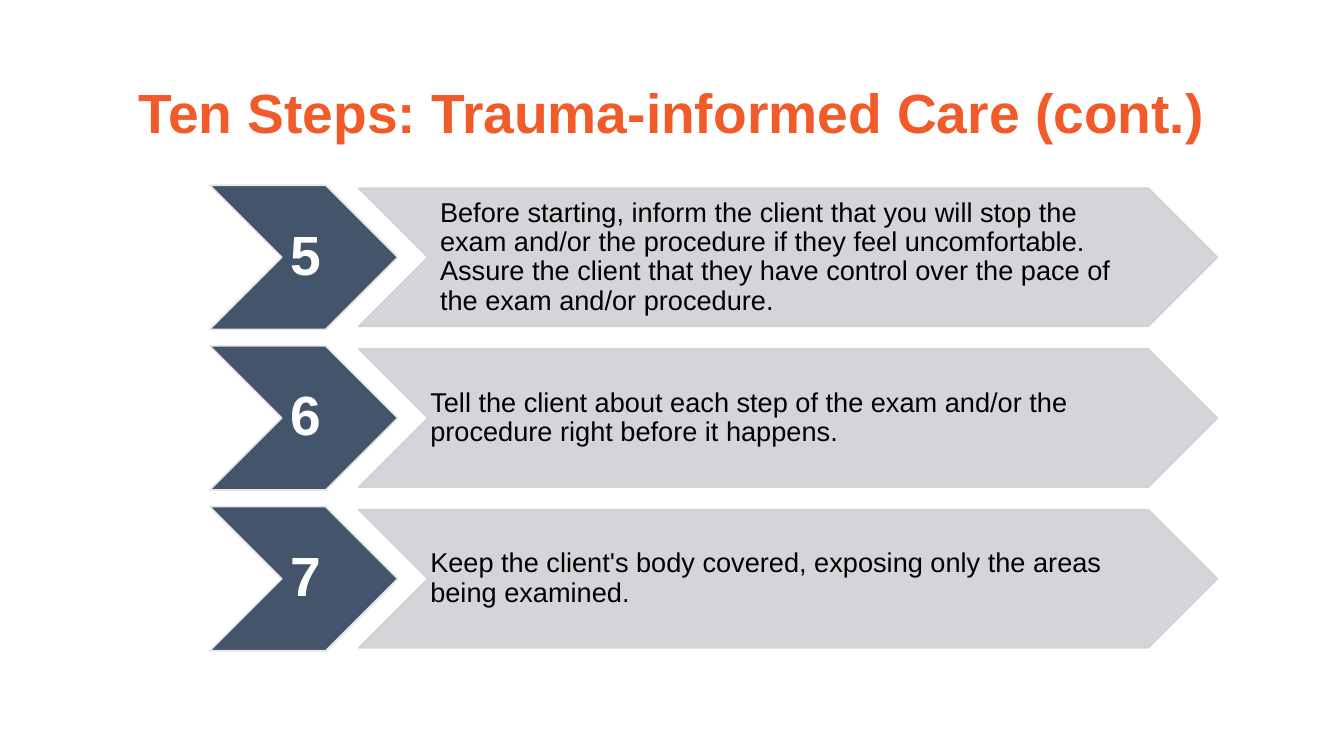
from lxml.etree import SubElement
from pptx import Presentation
from pptx.dml.color import RGBColor
from pptx.enum.shapes import MSO_SHAPE
from pptx.enum.text import MSO_ANCHOR, PP_ALIGN
from pptx.oxml.ns import qn
from pptx.util import Inches, Pt

# Content: number, text, insets of the text (left, top, right, bottom)
WIDE = (0.2, 0.2, 0.2, 0.2)
SLIM = (0.04, 0.02, 0, 0.02)
TITLE = "Ten Steps: Trauma-informed Care (cont.)"
STEPS = [
    ("5", "Before starting, inform the client that you will stop the exam "
          "and/or the procedure if they feel uncomfortable. Assure the client "
          "that they have control over the pace of the exam and/or procedure.", WIDE),
    ("6", "Tell the client about each step of the exam and/or the procedure "
          "right before it happens.", SLIM),
    ("7", "Keep the client's body covered, exposing only the areas being "
          "examined.", SLIM),
]

# Theme
THEME = {
    "navy": RGBColor.from_string("44546A"),
    "edge": RGBColor.from_string("E7E6E6"),
    "grey": RGBColor.from_string("CFD1D4"),
    "title": {"name": "Arial", "size": Pt(65), "bold": True,
              "color": RGBColor.from_string("F15A29")},
    "digit": {"name": "Arial", "size": Pt(65), "bold": True,
              "color": RGBColor.from_string("FFFFFF")},
    "body": {"name": "Arial", "size": Pt(32), "bold": False,
             "color": RGBColor.from_string("000000")},
}

# Layout
TOP, PITCH = 3.03, 2.63
ARROW_H, BAR_H = 2.36, 2.26
BAR_GAP = (ARROW_H - BAR_H) / 2

deck = Presentation()
deck.slide_width, deck.slide_height = Inches(21.99), Inches(12.37)
slide = deck.slides.add_slide(deck.slide_layouts[6])


def fade(paint, share):
    color = paint._xPr.find(".//" + qn("a:srgbClr"))
    SubElement(color, qn("a:alpha"), val=str(share * 1000))


def add_arrow(box, fill, edge, share=100):
    arrow = slide.shapes.add_shape(MSO_SHAPE.CHEVRON, *map(Inches, box))
    arrow.shadow.inherit = False
    arrow.line.width = Pt(2)
    for paint, color in ((arrow.fill, fill), (arrow.line.fill, edge)):
        paint.solid()
        paint.fore_color.rgb = color
        if share < 100:
            fade(paint, share)


def add_text(box, text, style, insets, align, anchor=MSO_ANCHOR.MIDDLE, pitch=0.9):
    frame = slide.shapes.add_textbox(*map(Inches, box)).text_frame
    frame.word_wrap, frame.vertical_anchor = True, anchor
    for side, inset in zip(("left", "top", "right", "bottom"), insets):
        setattr(frame, "margin_" + side, Inches(inset))
    para = frame.paragraphs[0]
    para.alignment, para.line_spacing = align, pitch
    run = para.add_run()
    run.text = text
    for key, value in THEME[style].items():
        if key == "color":
            run.font.color.rgb = value
        else:
            setattr(run.font, key, value)


# Steps
for row, (digit, text, insets) in enumerate(STEPS):
    top = TOP + row * PITCH
    add_arrow((3.43, top, 3.08, ARROW_H), THEME["navy"], THEME["edge"])
    add_text((4.6, top, 0.73, ARROW_H), digit, "digit",
             (0.09, 0.05, 0, 0.05), PP_ALIGN.CENTER)
    bar = top + BAR_GAP
    add_arrow((5.87, bar, 14.05, BAR_H), THEME["grey"], THEME["grey"], 90)
    add_text((7, bar, 11.79, BAR_H), text, "body", insets, PP_ALIGN.LEFT)

# Title
add_text((1.69, 1.18, 18.6, 1.21), TITLE, "title", (0.1, 0.1, 0.1, 0.1),
         PP_ALIGN.CENTER, MSO_ANCHOR.TOP, 1.0)

deck.save("out.pptx")
